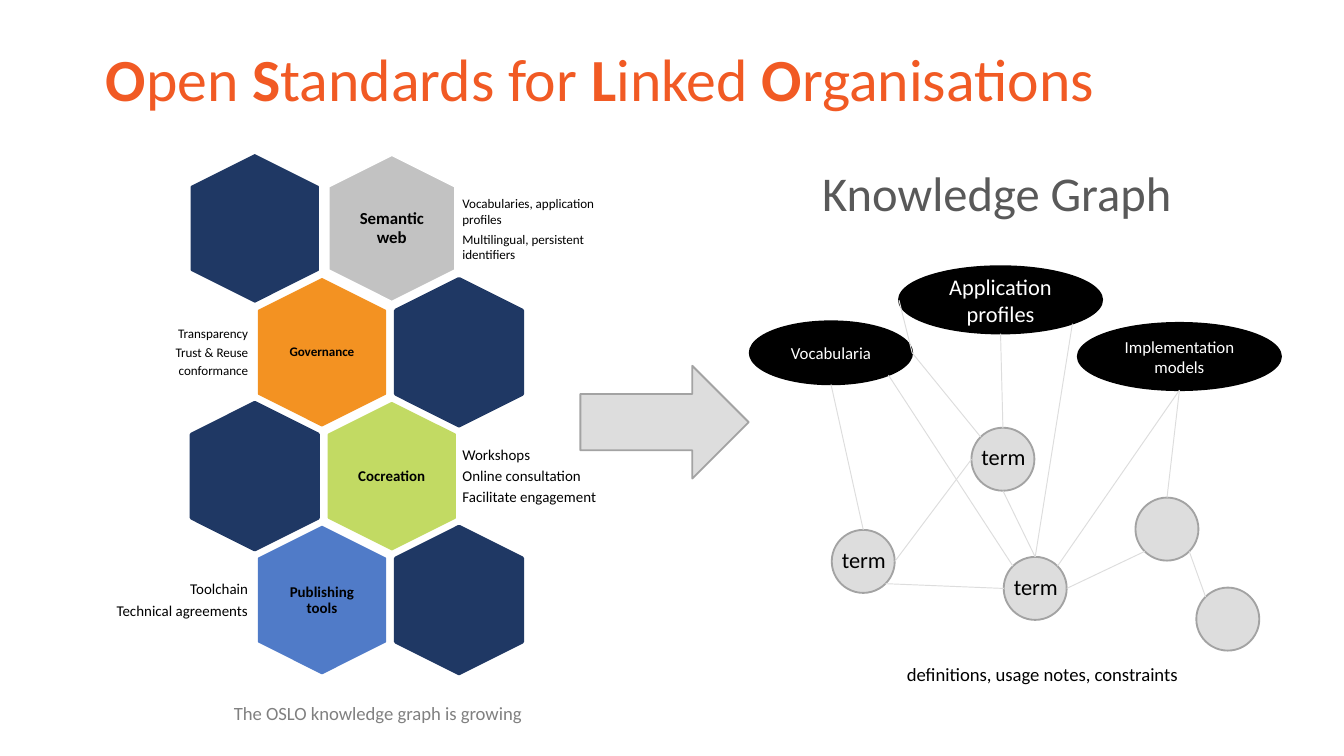
from math import cos, radians, sin

from lxml import etree
from pptx import Presentation
from pptx.dml.color import RGBColor
from pptx.enum.shapes import MSO_CONNECTOR, MSO_SHAPE
from pptx.enum.text import MSO_ANCHOR, PP_ALIGN
from pptx.oxml.ns import qn
from pptx.util import Cm, Pt

HEXAGON = MSO_SHAPE.HEXAGON
ELLIPSE = MSO_SHAPE.FLOWCHART_CONNECTOR
ARROW = MSO_SHAPE.RIGHT_ARROW
STRAIGHT = MSO_CONNECTOR.STRAIGHT
TOP, MIDDLE, BOTTOM = MSO_ANCHOR.TOP, MSO_ANCHOR.MIDDLE, MSO_ANCHOR.BOTTOM
LEFT, CENTER, RIGHT = PP_ALIGN.LEFT, PP_ALIGN.CENTER, PP_ALIGN.RIGHT

COLORS = {
    "title": "F15A24", "heading": "595959", "caption": "808080",
    "black": "000000", "white": "FFFFFF", "navy": "1F3864",
    "silver": "C2C2C2", "orange": "F39222", "lime": "C2DA63",
    "blue": "507BC8", "pale": "DDDDDD", "outline": "A3A3A3",
}
ANGLES = {"right": 0, "bottom right": 45, "bottom": 90, "bottom left": 135,
          "left": 180, "top left": 225, "top": 270, "top right": 315}

HEX_WIDTH, HEX_HEIGHT = 2.77, 2.39
HEX_TOP, ROW_PITCH, COLUMN_PITCH = 3.12, 2.34, 2.59
ROW_LEFTS = (3.43, 4.7)
NODE_SIZE = 1.19

PILLARS = [
    ("Semantic web", 9, "silver", "white", 7, 1.0,
     ["Vocabularies, application profiles", "Multilingual, persistent identifiers"]),
    ("Governance", 7, "orange", "orange", 7, 0.9,
     ["Transparency", "Trust & Reuse", "conformance"]),
    ("Cocreation", 8, "lime", "lime", 8, 0.9,
     ["Workshops", "Online consultation", "Facilitate engagement"]),
    ("Publishing tools", 8, "blue", "blue", 8, 0.9,
     ["Toolchain", "Technical agreements"]),
]
CONCEPTS = {
    "vocabulary": ("Vocabularia", 9, (14.17, 6.07, 3.07, 1.19)),
    "profiles": ("Application profiles", 12, (16.99, 5.03, 3.84, 1.27)),
    "models": ("Implementation models", 9, (20.37, 6.1, 3.84, 1.27)),
}
NODES = {
    "left term": (15.72, 10.01, "term"),
    "upper term": (18.36, 8.08, "term"),
    "lower term": (18.97, 10.52, "term"),
    "right node": (21.46, 9.4, ""),
    "last node": (22.61, 11.1, ""),
}
LINKS = [
    ("vocabulary", "right", "profiles", "left"),
    ("vocabulary", "bottom", "left term", "top"),
    ("left term", "right", "upper term", "left"),
    ("upper term", "top", "profiles", "bottom"),
    ("right node", "top", "models", "bottom"),
    ("lower term", "top right", "models", "bottom"),
    ("lower term", "top", "profiles", "bottom right"),
    ("lower term", "top left", "vocabulary", "bottom right"),
    ("upper term", "bottom", "lower term", "top"),
    ("lower term", "right", "right node", "bottom left"),
    ("right node", "bottom right", "last node", "top left"),
    ("left term", "bottom right", "lower term", "left"),
    ("vocabulary", "right", "upper term", "top left"),
]


def rgb(name):
    return RGBColor.from_string(COLORS[name])


class SlideBuilder:
    font_name = "Calibri"

    def __init__(self, slide):
        self.slide = slide

    def format_text(self, text_frame, size, color, align=LEFT, spacing=1.0,
                    after=0, bold=False):
        for paragraph in text_frame.paragraphs:
            paragraph.alignment = align
            paragraph.line_spacing = spacing
            paragraph.space_after = Pt(after)
            for run in paragraph.runs:
                run.font.name = self.font_name
                run.font.size = Pt(size)
                run.font.bold = bold
                run.font.color.rgb = rgb(color)

    def text(self, box, lines, size, color="black", anchor=TOP,
             margins=(0.25, 0.13), wrap=True, **style):
        shape = self.slide.shapes.add_textbox(*map(Cm, box))
        text_frame = shape.text_frame
        text_frame.word_wrap = wrap
        text_frame.vertical_anchor = anchor
        text_frame.margin_left = text_frame.margin_right = Cm(margins[0])
        text_frame.margin_top = text_frame.margin_bottom = Cm(margins[1])
        text_frame.text = "\n".join(lines)
        self.format_text(text_frame, size, color, **style)
        return shape

    def title(self, box, words, size):
        shape = self.text(box, [""], size, anchor=MIDDLE)
        paragraph = shape.text_frame.paragraphs[0]
        for word in words:
            for part in (word[0], word[1:]):
                paragraph.add_run().text = part
        self.format_text(shape.text_frame, size, "title", spacing=0.9)
        for run in paragraph.runs[::2]:
            run.font.bold = True

    def shape(self, kind, box, fill, line, width=1):
        shape = self.slide.shapes.add_shape(kind, *map(Cm, box))
        shape.shadow.inherit = False
        shape.fill.solid()
        shape.fill.fore_color.rgb = rgb(fill)
        shape.line.color.rgb = rgb(line)
        shape.line.width = Pt(width)
        return shape

    def hexagon(self, left, top, fill, line, width=1):
        shape = self.shape(HEXAGON, (left, top, HEX_WIDTH, HEX_HEIGHT), fill, line, width)
        shape.adjustments[0] = 0.25
        shape.rotation = 90

    def concept(self, box, label, size):
        shape = self.shape(ELLIPSE, box, "black", "black")
        shape.text_frame.word_wrap = True
        shape.text_frame.vertical_anchor = MIDDLE
        shape.text_frame.text = label
        self.format_text(shape.text_frame, size, "white", align=CENTER)

    def link(self, start, end):
        connector = self.slide.shapes.add_connector(STRAIGHT, *map(Cm, start + end))
        connector.line.color.rgb = rgb("pale")
        connector.line.width = Pt(0.5)
        etree.SubElement(connector._element.spPr, qn("a:effectLst"))


def edge_point(box, side):
    left, top, width, height = box
    angle = radians(ANGLES[side])
    return (left + width / 2 * (1 + cos(angle)), top + height / 2 * (1 + sin(angle)))


def add_pillars(builder):
    for row, (label, label_size, fill, line, size, spacing, notes) in enumerate(PILLARS):
        top = HEX_TOP + row * ROW_PITCH
        lefts = [ROW_LEFTS[row % 2] + column * COLUMN_PITCH for column in range(2)]
        notes_on_right = row % 2 == 0
        if notes_on_right:
            plain_left, left = lefts
            notes_left, notes_width, align = 8.66, 3.07, LEFT
        else:
            left, plain_left = lefts
            notes_left, notes_width, align = 1.8, 2.97, RIGHT
        builder.hexagon(plain_left, top, "navy", "navy", 2 if row else 1)
        builder.hexagon(left, top, fill, line)
        builder.text((left + 0.56, top + 0.25, 1.65, 1.9), [label], label_size,
                     anchor=MIDDLE, margins=(0.08, 0.08), align=CENTER,
                     spacing=0.9, after=label_size * 0.35, bold=True)
        builder.text((notes_left, top + 0.38, notes_width, 1.65), notes, size,
                     anchor=MIDDLE, margins=(0.08, 0.08), align=align,
                     spacing=spacing, after=size * 0.35)


def add_knowledge_graph(builder):
    boxes = {}
    for name, (label, size, box) in CONCEPTS.items():
        boxes[name] = box
        builder.concept(box, label, size)
    for name, (left, top, label) in NODES.items():
        boxes[name] = (left, top, NODE_SIZE, NODE_SIZE)
        builder.shape(ELLIPSE, boxes[name], "pale", "outline")
    for start, start_side, end, end_side in LINKS:
        builder.link(edge_point(boxes[start], start_side), edge_point(boxes[end], end_side))
    for left, top, label in NODES.values():
        if label:
            builder.text((left - 0.06, top + 0.17, 1.78, 0.76), [label], 12)


def main():
    presentation = Presentation()
    presentation.slide_width, presentation.slide_height = Cm(25.4), Cm(14.28)
    builder = SlideBuilder(presentation.slides.add_slide(presentation.slide_layouts[6]))
    builder.title((1.75, 0.76, 21.9, 1.6),
                  ["Open ", "Standards for ", "Linked ", "Organisations"], 32)
    builder.text((15.29, 3.07, 7.75, 1.6), ["Knowledge Graph"], 26, "heading", spacing=0.9)
    builder.text((4.42, 13.23, 7.7, 0.46), ["The OSLO knowledge graph is growing"], 10,
                 "caption", anchor=BOTTOM, margins=(0, 0), spacing=0.9)
    add_pillars(builder)
    builder.shape(ARROW, (10.97, 6.91, 3.18, 2.13), "pale", "outline")
    add_knowledge_graph(builder)
    builder.text((16.89, 12.4, 5.74, 0.69), ["definitions, usage notes, constraints"], 10,
                 wrap=False)
    presentation.save("out.pptx")


if __name__ == "__main__":
    main()
